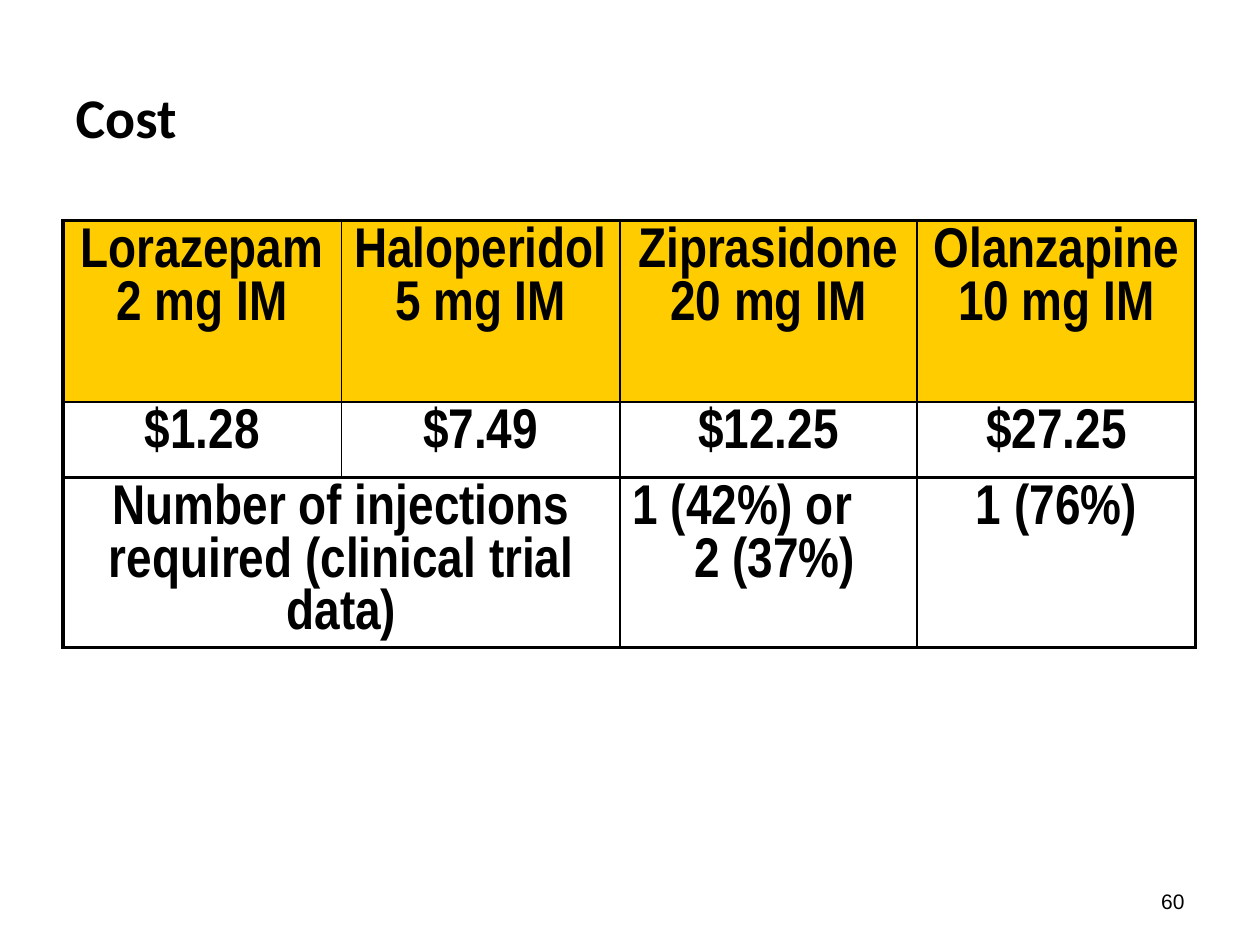
from dataclasses import dataclass

import pptx
import pptx.dml.color
import pptx.enum.text
import pptx.oxml.ns
import pptx.util
from lxml import etree

Inches = pptx.util.Inches
Align = pptx.enum.text.PP_ALIGN
Anchor = pptx.enum.text.MSO_ANCHOR


@dataclass(frozen=True)
class Theme:
    ink: str = "000000"
    header: str = "FFCC00"
    body: str = "FFFFFF"
    title_font: str = "Calibri"
    table_font: str = "Arial Narrow"
    number_font: str = "Arial"
    large: int = 32
    small: int = 12
    thick: float = 2.25
    thin: float = 1


THEME = Theme()
WIDTH, HEIGHT = 10, 7.5
MARGIN = 0.05 * WIDTH
COLUMNS = (2.21, 2.21, 2.36, 2.21)
ROWS = (1.44, 0.6, 0.74)
HANGING = 0.49
COSTS = (
    ("Lorazepam 2 mg IM", "Haloperidol 5 mg IM", "Ziprasidone 20 mg IM", "Olanzapine 10 mg IM"),
    ("$1.28", "$7.49", "$12.25", "$27.25"),
    ("Number of injections required (clinical trial data)", "", "1 (42%) or\n2 (37%)", "1 (76%)"),
)


def rgb(value):
    return pptx.dml.color.RGBColor.from_string(value)


def add_text(paragraph, wording, font, size, bold=False, align=Align.LEFT):
    paragraph.alignment = align
    for index, line in enumerate(wording.split("\n")):
        if index:
            paragraph.add_line_break()
        run = paragraph.add_run()
        run.text = line
        run.font.name = font
        run.font.size = pptx.util.Pt(size)
        run.font.bold = bold
        run.font.color.rgb = rgb(THEME.ink)


def place(box, left, top, width, height):
    box.left, box.top = Inches(left), Inches(top)
    box.width, box.height = Inches(width), Inches(height)


def add_title(slide, wording):
    title = slide.shapes.title
    place(title, MARGIN, 0.04 * HEIGHT, WIDTH - 2 * MARGIN, 1.25)
    title.text_frame.vertical_anchor = Anchor.MIDDLE
    add_text(title.text_frame.paragraphs[0], wording, THEME.title_font, THEME.large, True)


def set_borders(cell, row, column):
    last_row, last_column = len(ROWS) - 1, len(COLUMNS) - 1
    heavy = {
        "L": column == 0,
        "R": column == last_column,
        "T": row in (0, last_row),
        "B": row >= last_row - 1,
    }
    properties = cell._tc.get_or_add_tcPr()
    qn = pptx.oxml.ns.qn
    for side, is_heavy in heavy.items():
        width = pptx.util.Pt(THEME.thick if is_heavy else THEME.thin)
        border = etree.SubElement(properties, qn(f"a:ln{side}"), w=str(width))
        fill = etree.SubElement(border, qn("a:solidFill"))
        etree.SubElement(fill, qn("a:srgbClr"), val=THEME.ink)


def fill_cell(cell, wording, row, column):
    set_borders(cell, row, column)
    cell.fill.solid()
    cell.fill.fore_color.rgb = rgb(THEME.body if row else THEME.header)
    if not wording:
        return
    paragraph = cell.text_frame.paragraphs[0]
    align = Align.LEFT if "\n" in wording else Align.CENTER
    add_text(paragraph, wording, THEME.table_font, THEME.large, True, align)
    if align == Align.LEFT:
        indents = paragraph._p.get_or_add_pPr()
        indents.set("marL", str(Inches(HANGING)))
        indents.set("indent", str(-Inches(HANGING)))


def add_cost_table(slide):
    frame = slide.shapes.add_table(
        len(ROWS), len(COLUMNS), Inches(MARGIN), Inches(1.75),
        Inches(sum(COLUMNS)), Inches(sum(ROWS)),
    )
    costs = frame.table
    for column, width in zip(costs.columns, COLUMNS):
        column.width = Inches(width)
    for row, height in zip(costs.rows, ROWS):
        row.height = Inches(height)
    costs.cell(2, 0).merge(costs.cell(2, 1))
    for row, wordings in enumerate(COSTS):
        for column, wording in enumerate(wordings):
            fill_cell(costs.cell(row, column), wording, row, column)


def add_page_number(slide, number):
    width = 2.33
    box = slide.shapes.add_textbox(
        Inches(WIDTH - MARGIN - width), Inches(6.95), Inches(width), Inches(0.4)
    )
    box.text_frame.word_wrap = True
    box.text_frame.vertical_anchor = Anchor.MIDDLE
    add_text(box.text_frame.paragraphs[0], number, THEME.number_font, THEME.small, align=Align.RIGHT)


def main():
    deck = pptx.Presentation()
    deck.slide_width, deck.slide_height = Inches(WIDTH), Inches(HEIGHT)
    slide = deck.slides.add_slide(deck.slide_layouts.get_by_name("Title Only"))
    add_title(slide, "Cost")
    add_cost_table(slide)
    add_page_number(slide, "60")
    deck.save("out.pptx")


if __name__ == "__main__":
    main()
